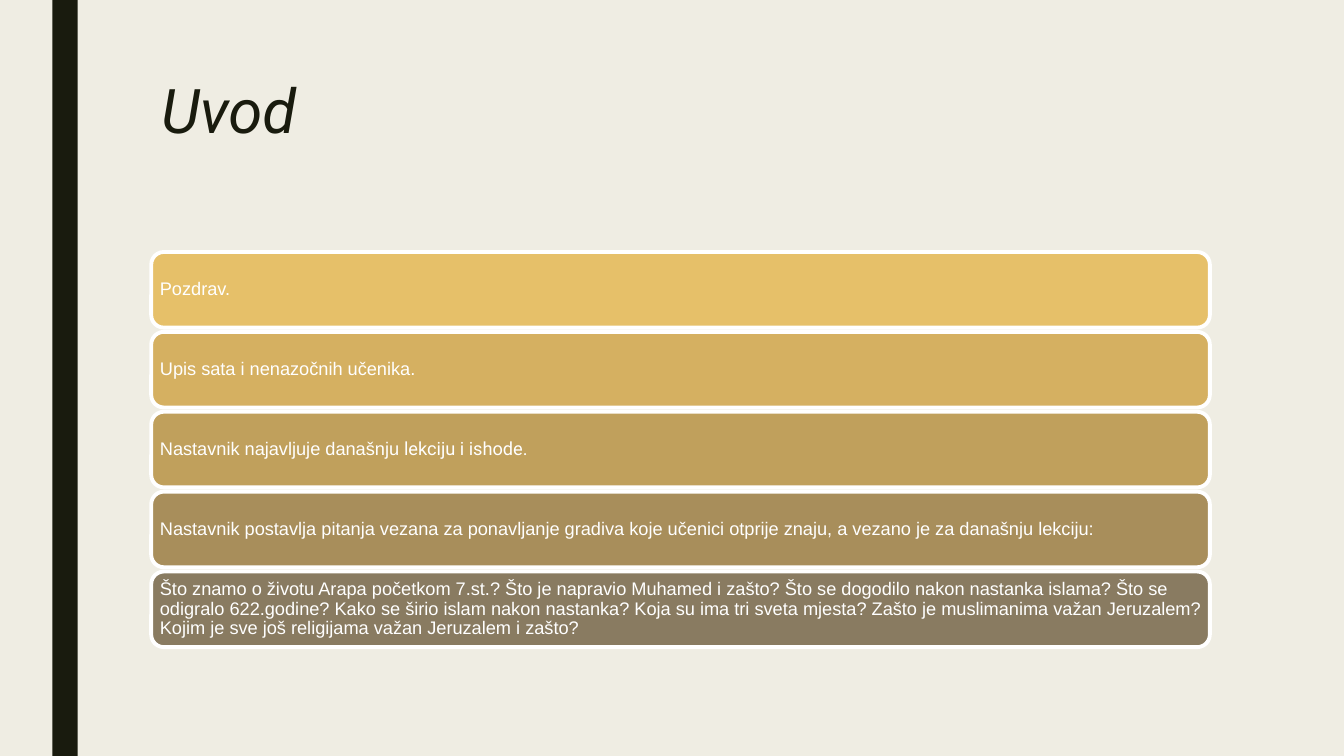
from pptx import Presentation
from pptx.dml.color import RGBColor
from pptx.enum.shapes import MSO_SHAPE
from pptx.enum.text import MSO_ANCHOR, PP_ALIGN
from pptx.util import Inches, Pt


def tint(code):
    return RGBColor.from_string(code)


class Deck:
    """Hold the style and the current slide, and draw its elements."""

    dark, white, paper = "191B0E", "FFFFFF", "EFEDE3"
    head, body = "Roboto", "Arial"

    def __init__(self):
        self.show = Presentation()
        self.show.slide_width = Inches(13.33)
        self.show.slide_height = Inches(7.5)
        self.slide = self.show.slides.add_slide(self.show.slide_layouts[6])
        back = self.slide.background.fill
        back.solid()
        back.fore_color.rgb = tint(self.paper)

    def shape(self, kind, box, fill, line=None):
        item = self.slide.shapes.add_shape(kind, *map(Inches, box))
        item.shadow.inherit = False
        item.fill.solid()
        item.fill.fore_color.rgb = tint(fill)
        if line:
            item.line.color.rgb = tint(line)
            item.line.width = Pt(2.75)
        else:
            item.line.fill.background()
        return item

    def label(self, frame, runs, size, color, space, slant=False):
        frame.word_wrap = True
        para = frame.paragraphs[0]
        para.alignment = PP_ALIGN.LEFT
        para.line_spacing = space
        for text, face in runs:
            run = para.add_run()
            run.text = text
            run.font.name = face
            run.font.size = Pt(size)
            run.font.italic = slant
            run.font.color.rgb = tint(color)

    def title(self, text, box):
        item = self.slide.shapes.add_textbox(*map(Inches, box))
        self.label(item.text_frame, [(text, self.head)], 44, self.dark, 0.89, True)

    def card(self, runs, box, fill):
        item = self.shape(MSO_SHAPE.ROUNDED_RECTANGLE, box, fill, self.white)
        frame = item.text_frame
        frame.margin_left = frame.margin_right = Inches(0.05)
        frame.margin_top = frame.margin_bottom = Inches(0.05)
        frame.vertical_anchor = MSO_ANCHOR.MIDDLE
        self.label(frame, runs, 13, self.white, 0.9)


def main():
    deck = Deck()
    deck.shape(MSO_SHAPE.RECTANGLE, (0.52, 0, 0.25, 7.5), deck.dark)
    deck.title("Uvod", (1.5, 0.75, 10.5, 1.62))

    cards = [
        ("E6C069", [("Pozdrav.", deck.body)]),
        ("D5B061", [("Upis sata i nenazočnih učenika.", deck.body)]),
        ("C0A05C", [("Nastavnik najavljuje današnju ", deck.body),
                    ("lekciju i ishode.", deck.head)]),
        ("A88E5B", [("Nastavnik postavlja pitanja vezana za ponavljanje gradiva "
                     "koje učenici otprije znaju, a vezano je za današnju lekciju:",
                     deck.body)]),
        ("897B61", [("Što znamo o životu Arapa početkom 7.st.? Što je napravio "
                     "Muhamed i zašto? Što se dogodilo nakon nastanka islama? "
                     "Što se odigralo 622.godine? Kako se širio islam nakon "
                     "nastanka? Koja su ima tri sveta mjesta? Zašto je "
                     "muslimanima važan Jeruzalem? Kojim je sve još religijama "
                     "važan Jeruzalem i zašto?", deck.body)]),
    ]
    top, end, high = 2.5, 6.42, 0.75
    step = (end - top - high) / (len(cards) - 1)
    for i, (fill, runs) in enumerate(cards):
        deck.card(runs, (1.5, top + i * step, 10.5, high), fill)

    deck.show.save("out.pptx")


if __name__ == "__main__":
    main()
